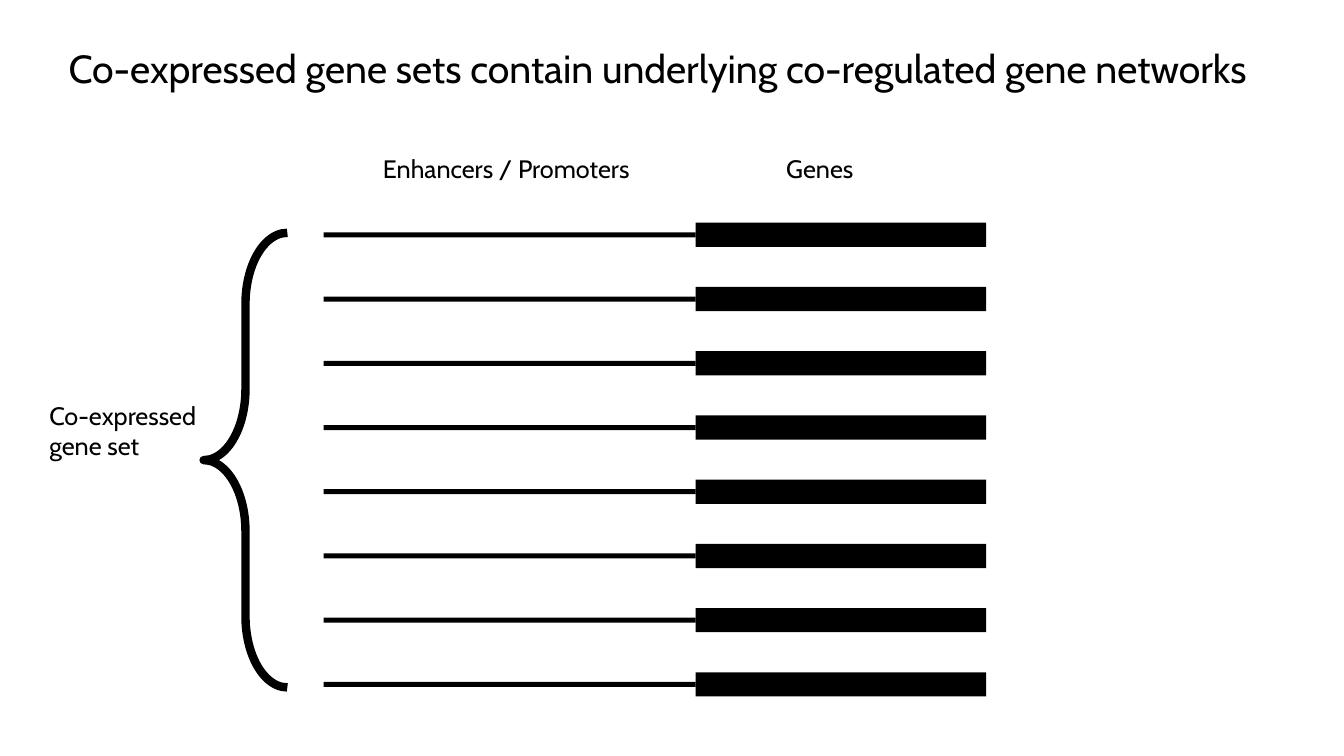
from lxml import etree
from pptx import Presentation
from pptx.dml.color import RGBColor
from pptx.enum import shapes, text
from pptx.oxml import ns
from pptx.util import Inches, Pt

TITLE = "Co-expressed gene sets contain underlying co-regulated gene networks"
HEADINGS = "Enhancers / Promoters\tGenes"
SET_LABEL = ["Co-expressed", "gene set"]

FONT, BLACK = "Cabin", "000000"
GENE_COUNT = 8
FIRST_TOP, LAST_TOP = 2.21, 6.67
GENE_LEFT, GENE_WIDTH, GENE_HEIGHT = 6.9, 2.88, 0.24
ENHANCER_LEFT, ENHANCER_HEIGHT = 3.21, 0.05
GENES_TAB = 4


def color(value):
    return RGBColor.from_string(value)


def write(frame, lines, size):
    frame.word_wrap = True
    frame.vertical_anchor = text.MSO_ANCHOR.TOP
    for index, line in enumerate(lines):
        para = frame.add_paragraph() if index else frame.paragraphs[0]
        para.alignment = text.PP_ALIGN.LEFT
        span = para.add_run()
        span.text = line
        span.font.name = FONT
        span.font.size = Pt(size)
        span.font.color.rgb = color(BLACK)


def add_label(slide, lines, left, top, width, height):
    box = slide.shapes.add_textbox(Inches(left), Inches(top), Inches(width), Inches(height))
    write(box.text_frame, lines, 18)
    return box


def add_bar(slide, left, top, width, height):
    bar = slide.shapes.add_shape(shapes.MSO_SHAPE.RECTANGLE, Inches(left), Inches(top),
                                 Inches(width), Inches(height))
    bar.shadow.inherit = False
    bar.fill.solid()
    bar.fill.fore_color.rgb = color(BLACK)
    bar.line.fill.background()


def set_tab(para, position):
    tabs = etree.SubElement(para._p.get_or_add_pPr(), ns.qn("a:tabLst"))
    etree.SubElement(tabs, ns.qn("a:tab"), pos=str(Inches(position)), algn="l")


def main():
    deck = Presentation()
    deck.slide_width, deck.slide_height = Inches(13.33), Inches(7.5)
    page = deck.slides.add_slide(deck.slide_layouts[0])

    subtitle = page.placeholders[1].element
    subtitle.getparent().remove(subtitle)
    title = page.shapes.title
    title.left, title.top = Inches(0.58), Inches(0.39)
    title.width, title.height = Inches(12.16), Inches(1.15)
    write(title.text_frame, [TITLE], 28)

    pitch = (LAST_TOP - FIRST_TOP) / (GENE_COUNT - 1)
    for row in range(GENE_COUNT):
        top = FIRST_TOP + row * pitch
        add_bar(page, GENE_LEFT, top, GENE_WIDTH, GENE_HEIGHT)
        add_bar(page, ENHANCER_LEFT, top + (GENE_HEIGHT - ENHANCER_HEIGHT) / 2,
                GENE_LEFT - ENHANCER_LEFT, ENHANCER_HEIGHT)

    brace = page.shapes.add_shape(shapes.MSO_SHAPE.LEFT_BRACE, Inches(2.02), Inches(2.31),
                                  Inches(0.83), Inches(4.51))
    brace.shadow.inherit = False
    brace.adjustments[0] = 0.85
    brace.fill.background()
    brace.line.color.rgb = color(BLACK)
    brace.line.width = Pt(6)

    add_label(page, SET_LABEL, 0.39, 3.92, 1.69, 0.71)
    headings = add_label(page, [HEADINGS], 3.7, 1.47, 4.9, 0.4)
    set_tab(headings.text_frame.paragraphs[0], GENES_TAB)

    deck.save("out.pptx")


if __name__ == "__main__":
    main()
